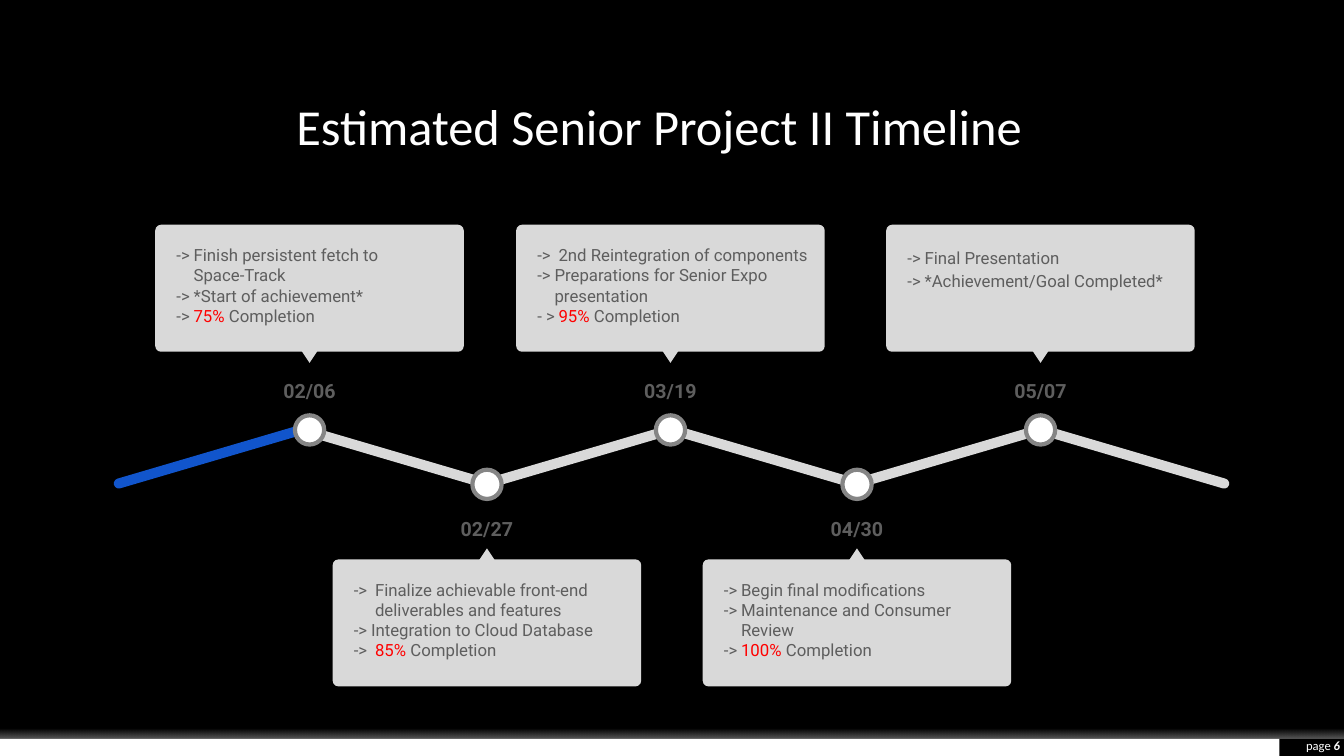
from dataclasses import dataclass
from lxml.etree import SubElement
from pptx import Presentation
from pptx.dml.color import RGBColor
from pptx.enum.shapes import MSO_SHAPE
from pptx.enum.text import MSO_ANCHOR, PP_ALIGN
from pptx.oxml.ns import qn
from pptx.util import Inches, Pt


@dataclass(frozen=True)
class Theme:
    """Colours, fonts and type sizes of the deck."""
    back: str = "000000"
    light: str = "FFFFFF"
    card: str = "D9D9D9"
    ring: str = "858585"
    ink: str = "5E5E5E"
    done: str = "1155CC"
    alert: str = "FF0000"
    head: str = "Calibri"
    body: str = "Roboto"
    title: int = 36
    date: int = 14
    text: int = 12
    page: int = 9


@dataclass(frozen=True)
class Event:
    """One milestone: centre, date, items of (mark, share, text, hang), spacing."""
    mid: float
    date: str
    items: tuple
    space: float = 1.0


T = Theme()
WIDE, HIGH = 13.33, 7.5
PAD = 0.13
CARD_W, CARD_H = 3.06, 1.26
TIP_W, TIP_H = 0.16, 0.12
DATE_W, DATE_H = 1.24, 0.49
NODE, STEP = 0.29, 1.83
EVENTS = (
    Event(3.07, "02/06", (
        ("->", "", "Finish persistent fetch to\nSpace-Track", 0.17),
        ("->", "", "*Start of achievement*", 0.17),
        ("->", "75%", " Completion", 0.17))),
    Event(4.83, "02/27", (
        ("->", "", "Finalize achievable front-end deliverables and features", 0.21),
        ("->", "", "Integration to Cloud Database", 0.17),
        ("->", "85%", " Completion", 0.21))),
    Event(6.65, "03/19", (
        ("->", "", "2nd Reintegration of components", 0.21),
        ("->", "", "Preparations for Senior Expo presentation", 0.17),
        ("- >", "95%", " Completion", 0.21))),
    Event(8.5, "04/30", (
        ("->", "", "Begin final modifications", 0.17),
        ("->", "", "Maintenance and Consumer Review", 0.17),
        ("->", "100%", " Completion", 0.17))),
    Event(10.32, "05/07", (
        ("->", "", "Final Presentation", 0.17),
        ("->", "", "*Achievement/Goal Completed*", 0.17)), 1.15),
)


def tint(color):
    """Turn a hex string into a colour."""
    return RGBColor.from_string(color)


def shape(slide, kind, box, color):
    """Add a flat filled shape."""
    item = slide.shapes.add_shape(kind, *map(Inches, box))
    item.shadow.inherit = False
    item.fill.solid()
    item.fill.fore_color.rgb = tint(color)
    item.line.fill.background()
    return item


def frame(slide, box, side=0.0, top=0.0, anchor=MSO_ANCHOR.TOP):
    """Add a wrapping text box and return its frame."""
    text = slide.shapes.add_textbox(*map(Inches, box)).text_frame
    text.word_wrap = True
    text.vertical_anchor = anchor
    text.margin_left = text.margin_right = Inches(side)
    text.margin_top = text.margin_bottom = Inches(top)
    return text


def style(para, face, size, color, bold=False):
    """Set the font of a paragraph."""
    font = para.font
    font.name, font.size, font.bold = face, Pt(size), bold
    font.color.rgb = tint(color)


def hang(para, depth):
    """Give a paragraph a hanging indent with a matching tab stop."""
    props = para._p.get_or_add_pPr()
    props.set("marL", str(Inches(depth)))
    props.set("indent", str(-Inches(depth)))
    tabs = SubElement(props, qn("a:tabLst"))
    SubElement(tabs, qn("a:tab"), pos=str(Inches(depth)), algn="l")


def fade(item, color, stops):
    """Fill a shape downwards with stops of position and opacity."""
    item.fill.gradient()
    grad = item._element.spPr.find(qn("a:gradFill"))
    for child in list(grad):
        grad.remove(child)
    row = SubElement(grad, qn("a:gsLst"))
    for place, alpha in stops:
        stop = SubElement(row, qn("a:gs"), pos=str(place * 1000))
        tone = SubElement(stop, qn("a:srgbClr"), val=color)
        SubElement(tone, qn("a:alpha"), val=str(alpha * 1000))
    SubElement(grad, qn("a:lin"), ang="5400000", scaled="0")


def footer(slide, box):
    """Draw the glow, the white strip and the page number."""
    x, y, w, h = box
    half, tab = h / 2, 0.64
    shape(slide, MSO_SHAPE.RECTANGLE, (x, y + half, w - tab, half), T.light)
    glow = shape(slide, MSO_SHAPE.RECTANGLE, (x, y, w, half), T.light)
    fade(glow, T.light, ((0, 0), (40, 0), (100, 35)))
    spot = (x + w - tab, y + 0.15, 0.6, half)
    para = frame(slide, spot, anchor=MSO_ANCHOR.MIDDLE).paragraphs[0]
    para.alignment = PP_ALIGN.RIGHT
    style(para, T.head, T.page, T.light)
    para.add_run().text = "page "
    num = para.add_run()
    num.text = "6"
    num.font.bold = num.font.italic = True


def title(slide, box):
    """Write the slide title."""
    para = frame(slide, box, 0.1, 0.05, MSO_ANCHOR.BOTTOM).paragraphs[0]
    para.text = "Estimated Senior Project II Timeline"
    para.alignment, para.line_spacing = PP_ALIGN.CENTER, 0.9
    style(para, T.head, T.title, T.light)


def track(slide, box):
    """Draw the zigzag of bars, the first one done."""
    x, y, w, h = box
    for i in range(len(EVENTS) + 1):
        bar = shape(slide, MSO_SHAPE.ROUNDED_RECTANGLE, (x + i * STEP, y, w, h),
                    T.card if i else T.done)
        bar.adjustments[0] = 0.5
        bar.rotation = 16.4 if i % 2 else -16.4


def card(slide, box, event):
    """Draw a card with its list of items."""
    x, y, w, h = box
    plate = shape(slide, MSO_SHAPE.ROUNDED_RECTANGLE, box, T.card)
    plate.adjustments[0] = 0.045
    text = frame(slide, (x + 0.08, y + 0.07, w - 0.08, h - 0.15), PAD, PAD)
    for i, (mark, share, words, depth) in enumerate(event.items):
        para = text.add_paragraph() if i else text.paragraphs[0]
        hang(para, depth)
        para.line_spacing = event.space
        style(para, T.body, T.text, T.ink)
        para.add_run().text = mark + "\t"
        if share:
            part = para.add_run()
            part.text = share
            part.font.color.rgb = tint(T.alert)
        for j, line in enumerate(words.split("\n")):
            if j:
                para.add_line_break()
            para.add_run().text = line


def stage(slide, box, event, above):
    """Place the card, pointer, date and node of one milestone in a box."""
    x, y, w, h = box
    mid = x + w / 2

    def put(gap, wide, high):
        """Centre a part at a distance from the card's outer edge."""
        top = y + gap if above else y + h - gap - high
        return mid - wide / 2, top, wide, high

    node = shape(slide, MSO_SHAPE.OVAL, put(h - NODE, NODE, NODE), T.light)
    node.line.color.rgb, node.line.width = tint(T.ring), Pt(3)
    date = put(1.36, DATE_W, DATE_H)
    para = frame(slide, date, PAD, PAD).paragraphs[0]
    para.text = event.date
    para.alignment, para.line_spacing = PP_ALIGN.CENTER, 1.15
    style(para, T.body, T.date, T.ink, True)
    card(slide, put(0, CARD_W, CARD_H), event)
    tip = shape(slide, MSO_SHAPE.ISOSCELES_TRIANGLE, put(1.25, TIP_W, TIP_H), T.card)
    tip.rotation = 180 if above else 0


def main():
    """Build the timeline slide."""
    deck = Presentation()
    deck.slide_width, deck.slide_height = Inches(WIDE), Inches(HIGH)
    slide = deck.slides.add_slide(deck.slide_layouts[6])
    slide.background.fill.solid()
    slide.background.fill.fore_color.rgb = tint(T.back)
    footer(slide, (0, HIGH - 0.34, WIDE, 0.34))
    track(slide, (1.09, 4.48, 1.99, 0.1))
    for i, event in enumerate(EVENTS):
        above = i % 2 == 0
        y, h = (2.23, 2.18) if above else (4.66, 2.15)
        stage(slide, (event.mid - CARD_W / 2, y, CARD_W, h), event, above)
    title(slide, (1.54, 0.1, 10, 1.5))
    deck.save("out.pptx")


if __name__ == "__main__":
    main()
